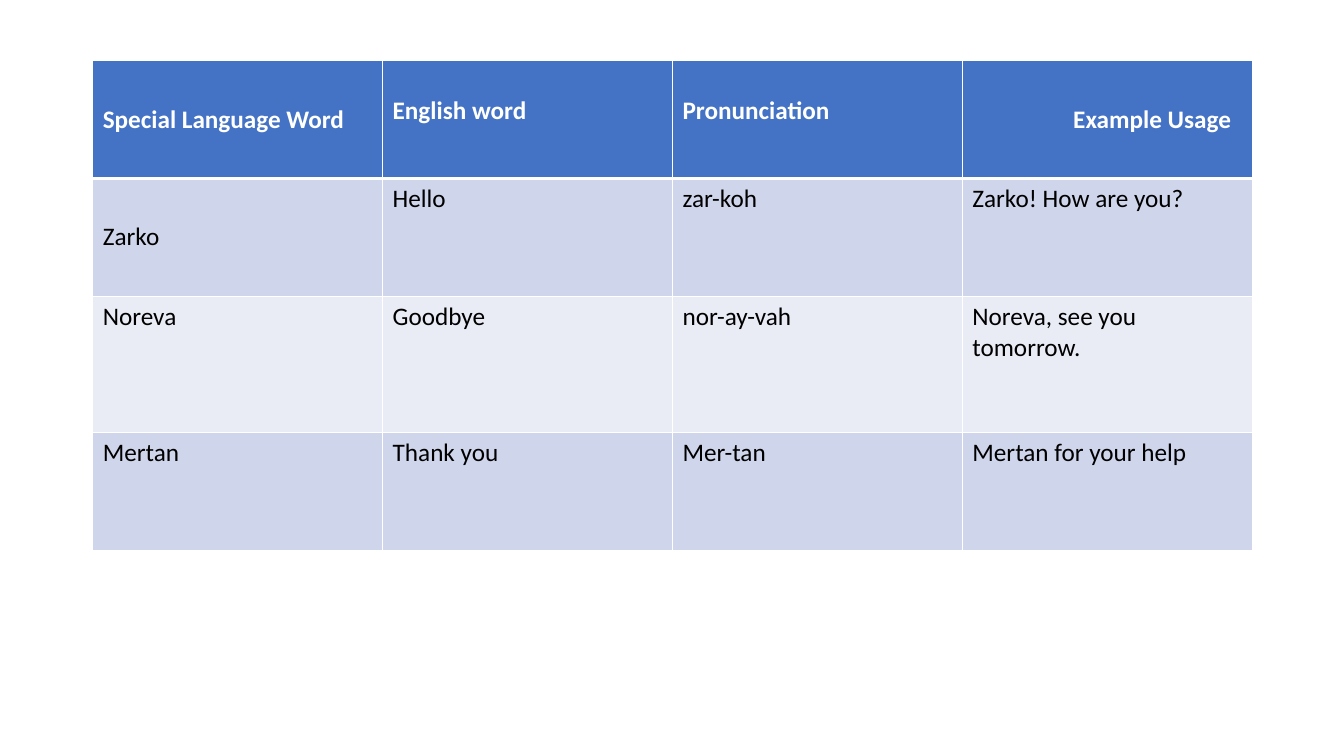
from lxml.etree import SubElement
from pptx import Presentation
from pptx.dml.color import RGBColor
from pptx.enum.text import MSO_ANCHOR
from pptx.oxml.ns import qn
from pptx.util import Inches, Pt

ROWS = [
    ("Special Language Word", "English word", "Pronunciation", "Example Usage"),
    ("Zarko", "Hello", "zar-koh", "Zarko! How are you?"),
    ("Noreva", "Goodbye", "nor-ay-vah", "Noreva, see you tomorrow."),
    ("Mertan", "Thank you", "Mer-tan", "Mertan for your help"),
]
ROW_HEIGHTS = [1.17, 1.17, 1.35, 1.17]
LEFT, TOP, WIDTH = 0.92, 0.6, 11.5
MIDDLE_CELLS = {(0, 0), (0, 3), (1, 0)}
CELL_MARGINS = {
    (0, 1): {"margin_top": 0.35},
    (0, 2): {"margin_top": 0.35},
    (0, 3): {"margin_left": 1.1},
}

WHITE = RGBColor(0xFF, 0xFF, 0xFF)
BLACK = RGBColor(0, 0, 0)
HEADER_BLUE = RGBColor(0x44, 0x72, 0xC4)
BAND_FILLS = [RGBColor(0xE9, 0xEB, 0xF5), RGBColor(0xCF, 0xD5, 0xEA)]
HEADER_FONT = {"name": "Calibri", "size": Pt(18), "bold": True}
BODY_FONT = {**HEADER_FONT, "bold": False}


def add_borders(cell, row):
    points = {"L": 1, "R": 1, "T": 3 if row == 1 else 1, "B": 3 if row == 0 else 1}
    properties = cell._tc.get_or_add_tcPr()
    for side, width in points.items():
        line = SubElement(properties, qn(f"a:ln{side}"), w=str(Pt(width)))
        fill = SubElement(line, qn("a:solidFill"))
        SubElement(fill, qn("a:srgbClr"), val=str(WHITE))


def fill_cell(cell, row, column, text):
    header = row == 0
    add_borders(cell, row)
    cell.fill.solid()
    cell.fill.fore_color.rgb = HEADER_BLUE if header else BAND_FILLS[row % 2]
    middle = (row, column) in MIDDLE_CELLS
    cell.vertical_anchor = MSO_ANCHOR.MIDDLE if middle else MSO_ANCHOR.TOP
    for name, value in CELL_MARGINS.get((row, column), {}).items():
        setattr(cell, name, Inches(value))
    span = cell.text_frame.paragraphs[0].add_run()
    span.text = text
    for name, value in (HEADER_FONT if header else BODY_FONT).items():
        setattr(span.font, name, value)
    span.font.color.rgb = WHITE if header else BLACK


def main():
    deck = Presentation()
    deck.slide_width, deck.slide_height = Inches(13.33), Inches(7.5)
    page = deck.slides.add_slide(deck.slide_layouts[6])
    table = page.shapes.add_table(
        len(ROWS), len(ROWS[0]), Inches(LEFT), Inches(TOP),
        Inches(WIDTH), Inches(sum(ROW_HEIGHTS)),
    ).table
    for row, (height, texts) in enumerate(zip(ROW_HEIGHTS, ROWS)):
        table.rows[row].height = Inches(height)
        for column, text in enumerate(texts):
            fill_cell(table.cell(row, column), row, column, text)
    deck.save("out.pptx")


if __name__ == "__main__":
    main()
